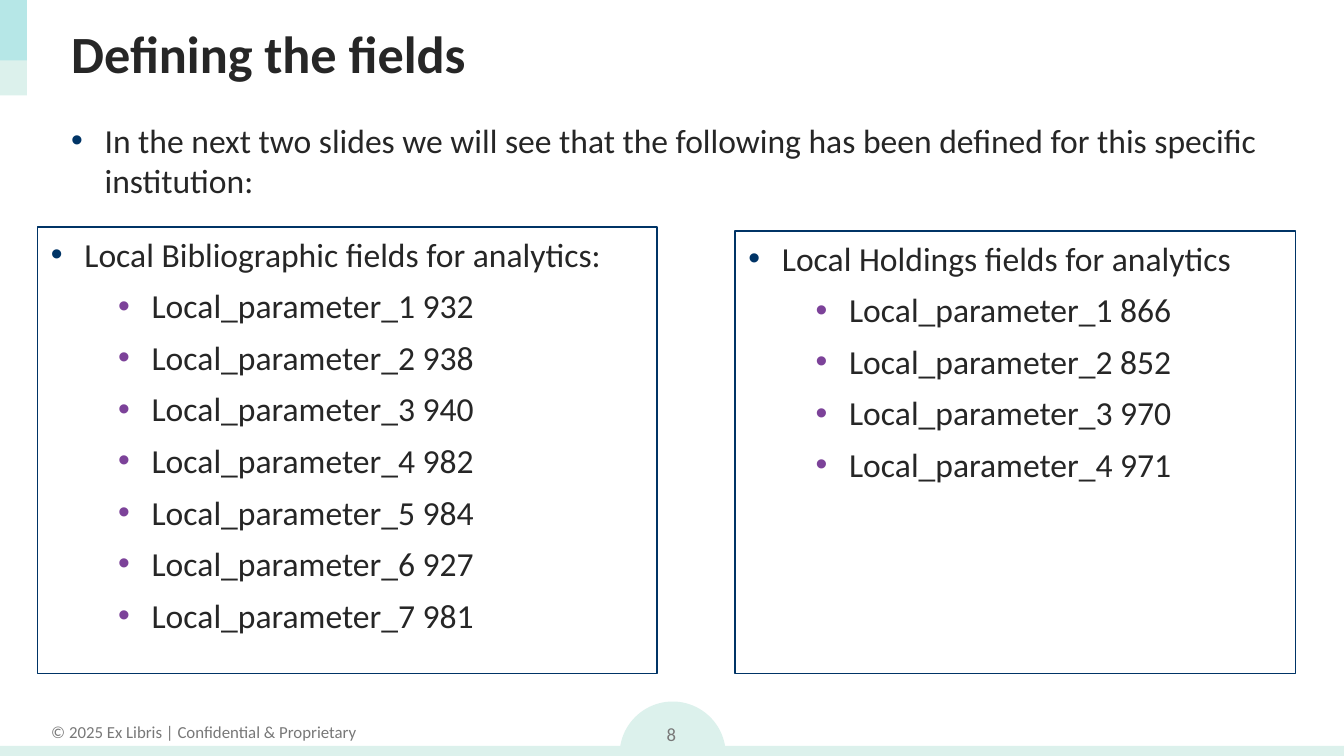
from dataclasses import dataclass

from lxml import etree
from pptx import Presentation
from pptx.dml.color import RGBColor
from pptx.enum import shapes, text
from pptx.oxml import ns
from pptx.util import Inches, Pt


@dataclass(frozen=True)
class Theme:
    font: str = "Calibri"
    mark: str = "Arial"
    ink: str = "262626"
    muted: str = "787878"
    navy: str = "003466"
    purple: str = "7C4299"
    mint: str = "DCF1EC"
    teal: str = "50CFDA"
    title: int = 28
    body: int = 18
    number: int = 10
    footer: int = 9
    gap: int = 6
    line: float = 0.75


THEME = Theme()
WIDTH = Inches(10)
HEIGHT = WIDTH * 9 // 16
CELL = WIDTH / 100
ROWS = HEIGHT / CELL
RIGHT = 96.4
FLOOR = 50.1
LEFT = 4.3


def area(col, row, cols, rows):
    return [round(n * CELL) for n in (col, row, cols, rows)]


def style(para, size, color, bold=False):
    for run in para.runs:
        run.font.name = THEME.font
        run.font.size = Pt(size)
        run.font.bold = bold
        run.font.color.rgb = RGBColor.from_string(color)


def block(slide, kind, color, *place, alpha=None):
    shape = slide.shapes.add_shape(kind, *area(*place))
    shape.shadow.inherit = False
    shape.fill.solid()
    shape.fill.fore_color.rgb = RGBColor.from_string(color)
    shape.line.fill.background()
    if alpha:
        tint = shape.fill._xPr.find(".//" + ns.qn("a:srgbClr"))
        etree.SubElement(tint, ns.qn("a:alpha"), val=str(alpha * 1000))


def label(slide, words, size, *place, wrap=True):
    frame = slide.shapes.add_textbox(*area(*place)).text_frame
    frame.word_wrap = wrap
    frame.vertical_anchor = text.MSO_ANCHOR.MIDDLE
    para = frame.paragraphs[0]
    para.text = words
    para.alignment = text.PP_ALIGN.CENTER
    style(para, size, THEME.muted)


def bullet(para, words, level=0):
    para.text = words
    para.level = level
    para.alignment = text.PP_ALIGN.LEFT
    props = para._p.get_or_add_pPr()
    props.set("marL", str(Inches(0.25 + level * 0.5)))
    props.set("indent", str(Inches(-0.25)))
    tint = etree.SubElement(props, ns.qn("a:buClr"))
    color = THEME.purple if level else THEME.navy
    etree.SubElement(tint, ns.qn("a:srgbClr"), val=color)
    etree.SubElement(props, ns.qn("a:buFont"), typeface=THEME.mark)
    etree.SubElement(props, ns.qn("a:buChar"), char="•")
    if level:
        para.space_before = Pt(THEME.gap)
    style(para, THEME.body, THEME.ink)


def outline(frame, head, codes=()):
    frame.word_wrap = True
    frame.vertical_anchor = text.MSO_ANCHOR.TOP
    bullet(frame.paragraphs[0], head)
    for count, code in enumerate(codes, 1):
        bullet(frame.add_paragraph(), f"Local_parameter_{count} {code}", 1)


def panel(slide, col, row, cols, head, codes):
    place = area(col, row, cols, FLOOR - row)
    shape = slide.shapes.add_shape(shapes.MSO_SHAPE.RECTANGLE, *place)
    shape.shadow.inherit = False
    shape.fill.background()
    shape.line.color.rgb = RGBColor.from_string(THEME.navy)
    shape.line.width = Pt(THEME.line)
    outline(shape.text_frame, head, codes)


def heading(slide, words):
    title = slide.shapes.title
    title.left, title.top, title.width, title.height = area(
        LEFT, 0.8, RIGHT - LEFT, 6.3)
    frame = title.text_frame
    frame.text = words
    frame.vertical_anchor = text.MSO_ANCHOR.MIDDLE
    frame.paragraphs[0].alignment = text.PP_ALIGN.LEFT
    style(frame.paragraphs[0], THEME.title, THEME.ink, True)


def decor(slide):
    rect = shapes.MSO_SHAPE.RECTANGLE
    block(slide, shapes.MSO_SHAPE.OVAL, THEME.mint, 46.1, 52.2, 7.9, 7.9)
    block(slide, rect, THEME.mint, 0, 55.5, 100, ROWS - 55.5)
    block(slide, rect, THEME.mint, 0, 0, 2, 7.1)
    block(slide, rect, THEME.teal, 0, 0, 2, 4.5, alpha=27)
    label(slide, "© 2025 Ex Libris | Confidential & Proprietary",
          THEME.footer, 2.7, 53.2, 24.9, 2.5, wrap=False)
    label(slide, "8", THEME.number, 47, 52.6, 5.9, 4)


def main():
    deck = Presentation()
    deck.slide_width, deck.slide_height = WIDTH, HEIGHT
    slide = deck.slides.add_slide(deck.slide_layouts[5])
    decor(slide)
    heading(slide, "Defining the fields")
    intro = slide.shapes.add_textbox(*area(LEFT, 8.4, RIGHT - LEFT, 7.1))
    outline(intro.text_frame,
            "In the next two slides we will see that the following has been "
            "defined for this specific institution:")
    panel(slide, 2.8, 16.9, 46.1, "Local Bibliographic fields for analytics:",
          (932, 938, 940, 982, 984, 927, 981))
    panel(slide, 54.7, 17.2, RIGHT - 54.7,
          "Local Holdings fields for analytics", (866, 852, 970, 971))
    deck.save("out.pptx")


if __name__ == "__main__":
    main()
